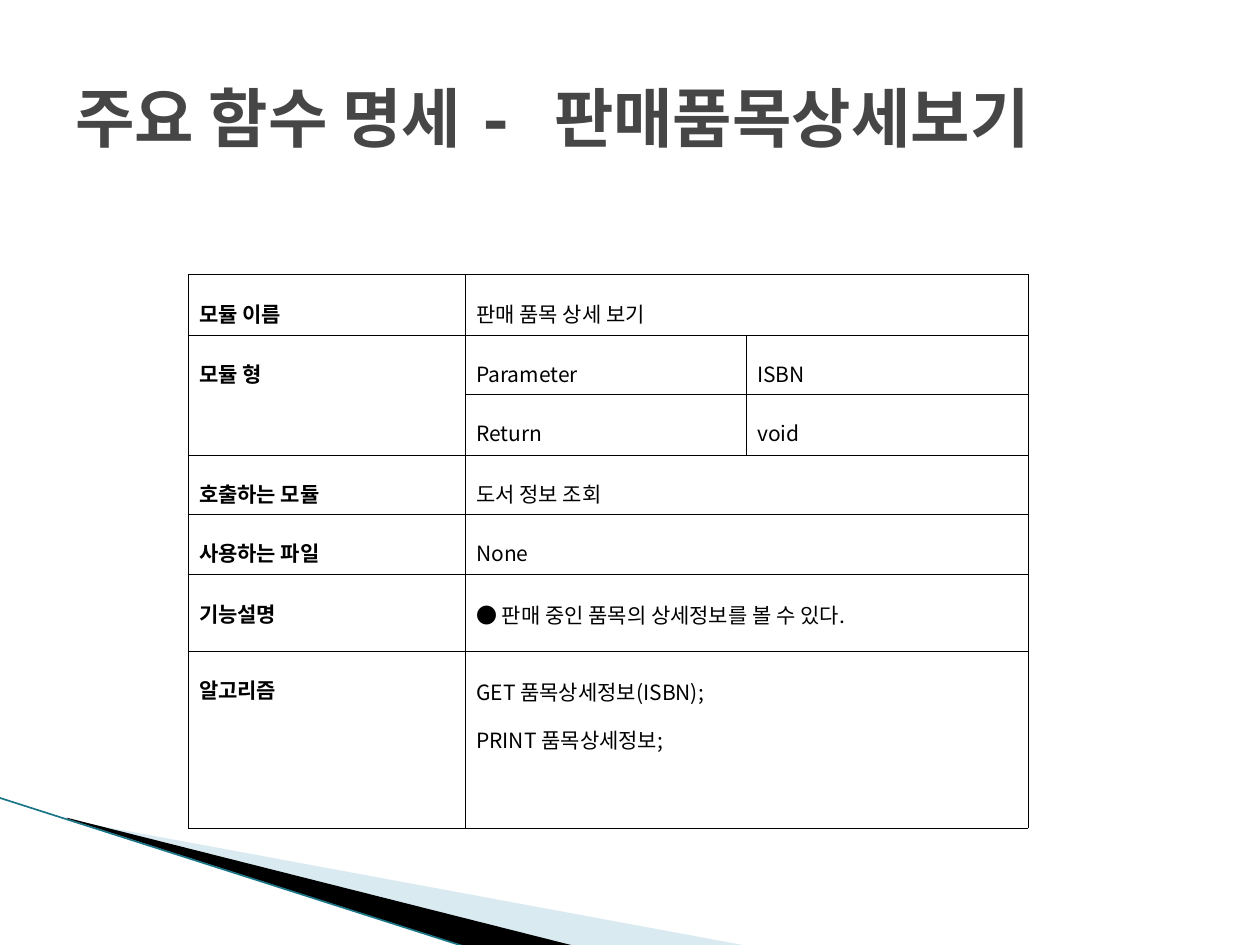
from pptx import Presentation
from pptx.dml.color import RGBColor
from pptx.enum.shapes import MSO_CONNECTOR
from pptx.enum.text import MSO_ANCHOR, PP_ALIGN
from pptx.oxml import parse_xml
from pptx.oxml.ns import nsdecls, qn
from pptx.util import Inches, Pt
from lxml import etree

LINE = MSO_CONNECTOR.STRAIGHT
MIDDLE = MSO_ANCHOR.MIDDLE
JUSTIFY = PP_ALIGN.JUSTIFY
SANS, MONO = "Noto Sans CJK KR", "Noto Sans Mono"


def rgb(code):
    return RGBColor.from_string(code)


def style(para, size, color, bold, face):
    for run in para.runs:
        font = run.font
        font.size, font.bold, font.name = Pt(size), bold, face
        font.color.rgb = rgb(color)


prs = Presentation()
prs.slide_width, prs.slide_height = Inches(10), Inches(7.5)
slide = prs.slides.add_slide(prs.slide_layouts[6])
shapes = slide.shapes

# Corner wedges
wedges = [
    ("A0CBDC", 40, [(0.55, 6.51), (5.95, 7.51), (4.56, 7.51), (0.55, 6.5)]),
    ("000000", 100, [(0.53, 6.49), (4.57, 7.51), (3.72, 7.52), (0.54, 6.5)]),
]
for color, alpha, points in wedges:
    spots = [(Inches(x), Inches(y)) for x, y in points]
    pen = shapes.build_freeform(*spots[0])
    pen.add_line_segments(spots[1:], close=True)
    wedge = pen.convert_to_shape()
    wedge.shadow.inherit = False
    wedge.fill.solid()
    wedge.fill.fore_color.rgb = rgb(color)
    wedge.line.fill.background()
    if alpha < 100:
        tint = wedge._element.spPr.find(".//" + qn("a:srgbClr"))
        etree.SubElement(tint, qn("a:alpha")).set("val", str(alpha * 1000))

# Corner edge line
edge = shapes.add_connector(LINE, Inches(-0.01), Inches(6.33), Inches(3.71), Inches(7.52))
edge.line.color.rgb = rgb("1B7587")
edge.line.width = Pt(0.95)
etree.SubElement(edge._element.spPr, qn("a:effectLst"))

# Title
title = shapes.add_textbox(Inches(0.5), Inches(0.3), Inches(9), Inches(1.25))
frame = title.text_frame
frame.word_wrap = True
frame.vertical_anchor = MIDDLE
frame.text = "주요 함수 명세 - 판매품목상세보기"
style(frame.paragraphs[0], 36.9, "464646", True, MONO)

# Module table
rows = [
    ("모듈 이름", "판매 품목 상세 보기", ""),
    ("모듈 형", "Parameter", "ISBN"),
    ("", "Return", "void"),
    ("호출하는 모듈", "도서 정보 조회", ""),
    ("사용하는 파일", "None", ""),
    ("기능설명", "● 판매 중인 품목의 상세정보를 볼 수 있다.", ""),
    ("알고리즘", "GET 품목상세정보(ISBN);\nPRINT 품목상세정보;", ""),
]
widths = [2.2, 2.23, 2.24]
heights = [0.48, 0.47, 0.48, 0.47, 0.48, 0.61, 1.4]
table = shapes.add_table(len(rows), len(widths), Inches(1.49), Inches(2.18),
                         Inches(sum(widths)), Inches(sum(heights))).table
table.first_row = table.horz_banding = False
for col, width in zip(table.columns, widths):
    col.width = Inches(width)
for row, height in zip(table.rows, heights):
    row.height = Inches(height)

# Cell text, margins and borders
for r, row in enumerate(rows):
    for c, text in enumerate(row):
        cell = table.cell(r, c)
        cell.margin_left = cell.margin_right = Inches(0.09)
        cell.margin_top = cell.margin_bottom = Inches(0.05 if r > 4 and c else 0.04)
        props = cell._tc.get_or_add_tcPr()
        for side in ("lnL", "lnR", "lnT", "lnB"):
            props.append(parse_xml(
                f'<a:{side} {nsdecls("a")} w="{Pt(0.25)}"><a:solidFill>'
                f'<a:srgbClr val="000000"/></a:solidFill></a:{side}>'))
        cell.fill.background()
        if text:
            cell.text_frame.text = text
        for para in cell.text_frame.paragraphs:
            para.alignment = JUSTIFY
            para.line_spacing = 1.6
            style(para, 12, "000000", c == 0, SANS)

# Merged cells
for r, row in enumerate(rows):
    if not row[2]:
        table.cell(r, 1).merge(table.cell(r, 2))
table.cell(1, 0).merge(table.cell(2, 0))

prs.save("out.pptx")
